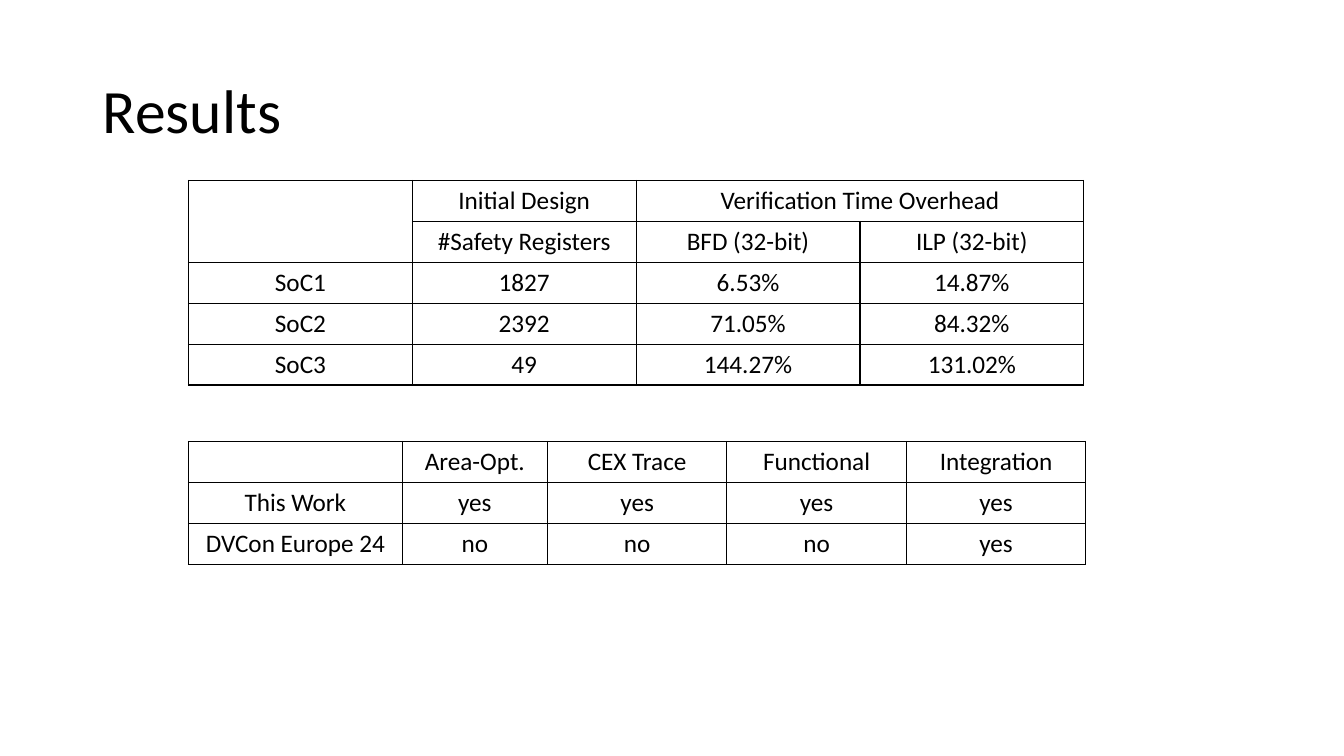
from lxml.etree import SubElement
from pptx import Presentation
from pptx.dml.color import RGBColor
from pptx.enum.text import MSO_ANCHOR, PP_ALIGN
from pptx.oxml.ns import qn
from pptx.util import Inches, Pt

FONT = "Calibri"
BLACK = "000000"
TITLE = "Results"
LEFT = 1.87
ROW_HEIGHT = 0.406

# Each merge is (first row, first column, last row, last column).
TABLES = [
    {
        "top": 1.79,
        "columns": [2.22] * 4,
        "rows": [
            ["", "Initial Design", "Verification Time Overhead", ""],
            ["", "#Safety Registers", "BFD (32-bit)", "ILP (32-bit)"],
            ["SoC1", "1827", "6.53%", "14.87%"],
            ["SoC2", "2392", "71.05%", "84.32%"],
            ["SoC3", "49", "144.27%", "131.02%"],
        ],
        "merges": [(0, 0, 1, 0), (0, 2, 0, 3)],
    },
    {
        "top": 4.38,
        "columns": [2.12, 1.44, 1.78, 1.78, 1.78],
        "rows": [
            ["", "Area-Opt.", "CEX Trace", "Functional", "Integration"],
            ["This Work", "yes", "yes", "yes", "yes"],
            ["DVCon Europe 24", "no", "no", "no", "yes"],
        ],
        "merges": [],
    },
]


def style_text(p, size, align):
    p.alignment = align
    for r in p.runs:
        r.font.name = FONT
        r.font.size = Pt(size)
        r.font.color.rgb = RGBColor.from_string(BLACK)


def add_borders(cell, color, width):
    tcPr = cell._tc.get_or_add_tcPr()
    for side in ("lnL", "lnR", "lnT", "lnB"):
        ln = SubElement(tcPr, qn(f"a:{side}"), w=str(Pt(width)))
        fill = SubElement(ln, qn("a:solidFill"))
        SubElement(fill, qn("a:srgbClr"), val=color)


def add_grid(s, top, columns, rows, merges):
    """Add a plain ruled table with centred text."""
    frame = s.shapes.add_table(
        len(rows), len(columns), Inches(LEFT), Inches(top),
        Inches(sum(columns)), Inches(ROW_HEIGHT * len(rows)))
    table = frame.table
    table.first_row = table.horz_banding = False
    for column, width in zip(table.columns, columns):
        column.width = Inches(width)
    for i, row in enumerate(rows):
        table.rows[i].height = Inches(ROW_HEIGHT)
        for j, text in enumerate(row):
            cell = table.cell(i, j)
            cell.text_frame.text = text
            style_text(cell.text_frame.paragraphs[0], 18, PP_ALIGN.CENTER)
            add_borders(cell, BLACK, 1)
            cell.fill.background()
    for r1, c1, r2, c2 in merges:
        table.cell(r1, c1).merge(table.cell(r2, c2))


def main():
    prs = Presentation()
    prs.slide_width, prs.slide_height = Inches(13.33), Inches(7.5)
    s = prs.slides.add_slide(prs.slide_layouts[5])

    title = s.shapes.title
    title.left, title.top = Inches(0.92), Inches(0.4)
    title.width, title.height = Inches(11.5), Inches(1.45)
    tf = title.text_frame
    tf.text = TITLE
    tf.vertical_anchor = MSO_ANCHOR.MIDDLE
    tf.paragraphs[0].line_spacing = 0.9
    style_text(tf.paragraphs[0], 44, PP_ALIGN.LEFT)

    for grid in TABLES:
        add_grid(s, **grid)
    prs.save("out.pptx")


if __name__ == "__main__":
    main()
